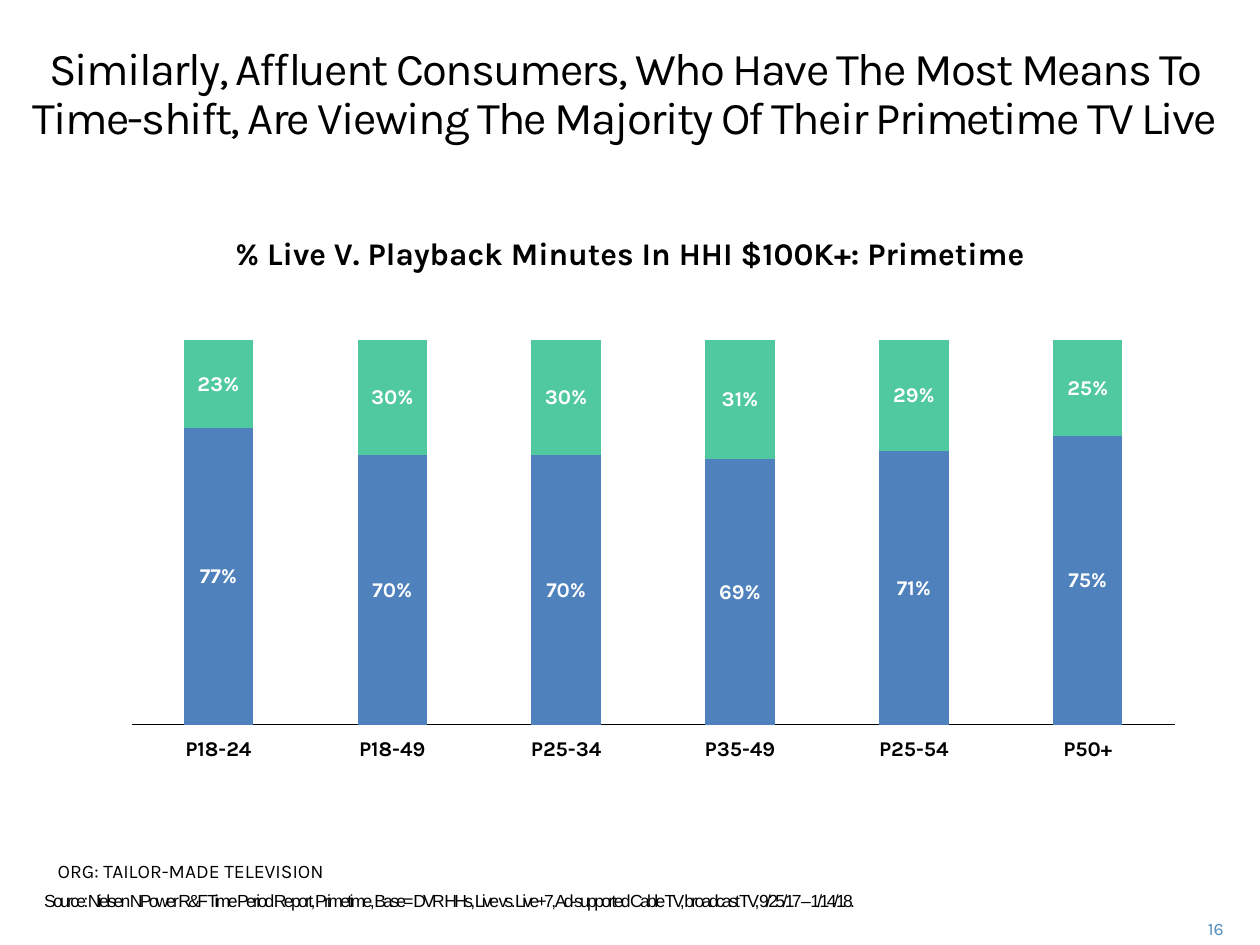
from lxml.etree import SubElement
from pptx import Presentation
from pptx.chart.data import CategoryChartData
from pptx.dml.color import RGBColor
from pptx.enum.chart import XL_CHART_TYPE, XL_TICK_LABEL_POSITION, XL_TICK_MARK
from pptx.enum.text import MSO_ANCHOR, MSO_AUTO_SIZE, PP_ALIGN
from pptx.oxml import parse_xml
from pptx.oxml.ns import nsdecls, qn
from pptx.util import Inches, Pt

BLACK = RGBColor(0x00, 0x00, 0x00)
WHITE = RGBColor(0xFF, 0xFF, 0xFF)
BLUE = RGBColor(0x4F, 0x81, 0xBD)
GREEN = RGBColor(0x50, 0xC8, 0xA0)
NUMBER_BLUE = RGBColor(0x50, 0x8A, 0xBA)
FONT = "Karla"

AGE_GROUPS = ["P18-24", "P18-49", "P25-34", "P35-49", "P25-54", "P50+"]
SERIES = [
    ("Live", [0.77, 0.70, 0.70, 0.69, 0.71, 0.75], BLUE),
    ("Playback", [0.23, 0.30, 0.30, 0.31, 0.29, 0.25], GREEN),
]


def set_font(font, size, color=BLACK, bold=False, name=FONT):
    font.size = Pt(size)
    font.name = name
    font.bold = bold
    font.color.rgb = color


def fill_text(sp, text, size, align=PP_ALIGN.LEFT, wrap=True, **style):
    tf = sp.text_frame
    tf.word_wrap = wrap
    tf.auto_size = MSO_AUTO_SIZE.NONE
    tf.vertical_anchor = MSO_ANCHOR.TOP
    p = tf.paragraphs[0]
    p.text = text
    p.alignment = align
    p.space_before = Pt(0)
    set_font(p.font, size, **style)
    return p


def fill_placeholder(sp, box, text, size, spacing, **style):
    sp.left, sp.top, sp.width, sp.height = box
    tf = sp.text_frame
    tf.margin_left = tf.margin_right = tf.margin_top = tf.margin_bottom = 0
    p = fill_text(sp, text, size, **style)
    p.runs[0].font._element.set("spc", str(spacing))
    return p


def add_title(slide, box):
    p = fill_placeholder(
        slide.shapes.title, box,
        "Similarly, Affluent Consumers, Who Have The Most Means To "
        "Time-shift, Are Viewing The Majority Of Their Primetime TV Live",
        26, -100, align=PP_ALIGN.CENTER)
    p.line_spacing = Pt(28)


def add_source(slide, box):
    p = fill_placeholder(
        slide.placeholders[1], box,
        "Source: Nielsen NPower R&F Time Period Report, Primetime, "
        "Base= DVR HHs, Live vs. Live+7, Ad-supported Cable TV, "
        "broadcast TV, 9/25/17 – 1/14/18.",
        10, -150, name="Arial")
    pPr = p._p.get_or_add_pPr()
    pPr.set("marL", "0")
    pPr.set("indent", "0")
    pPr.insert_element_before(
        parse_xml(f"<a:buNone {nsdecls('a')}/>"), "a:tabLst", "a:defRPr")


def add_label(slide, box, text, size, **style):
    fill_text(slide.shapes.add_textbox(*box), text, size, **style)


def set_plot_area(chart, x, y, w, h):
    plot_area = chart._chartSpace.chart.plotArea
    for old in plot_area.findall(qn("c:layout")):
        plot_area.remove(old)
    layout = parse_xml(f"<c:layout {nsdecls('c')}><c:manualLayout/></c:layout>")
    settings = [("layoutTarget", "inner"), ("xMode", "edge"), ("yMode", "edge"),
                ("x", x), ("y", y), ("w", w), ("h", h)]
    for tag, val in settings:
        SubElement(layout[0], qn(f"c:{tag}")).set("val", str(val))
    plot_area.insert(0, layout)


def add_viewing_chart(slide, box):
    data = CategoryChartData(number_format="0%")
    data.categories = AGE_GROUPS
    for name, values, _ in SERIES:
        data.add_series(name, values)
    chart = slide.shapes.add_chart(
        XL_CHART_TYPE.COLUMN_STACKED, *box, data).chart
    chart.has_title = False
    chart.has_legend = False
    set_font(chart.font, 10)
    set_plot_area(chart, 0.07, 0.06, 0.9, 0.71)

    cat_axis = chart.category_axis
    cat_axis.major_tick_mark = XL_TICK_MARK.NONE
    cat_axis.tick_label_position = XL_TICK_LABEL_POSITION.LOW
    cat_axis.format.line.color.rgb = BLACK
    cat_axis.format.line.width = Pt(0.75)
    set_font(cat_axis.tick_labels.font, 12, bold=True)

    val_axis = chart.value_axis
    val_axis.minimum_scale = 0
    val_axis.maximum_scale = 1
    val_axis.has_major_gridlines = False
    val_axis.visible = False

    plot = chart.plots[0]
    plot.vary_by_categories = False
    plot.gap_width = 150
    plot.overlap = 100
    for series, (_, _, color) in zip(plot.series, SERIES):
        series.format.fill.solid()
        series.format.fill.fore_color.rgb = color
        labels = series.data_labels
        labels.show_value = True
        labels.number_format = "0%"
        labels.number_format_is_linked = False
        set_font(labels.font, 12, WHITE, bold=True)


def inches(*lengths):
    return [Inches(n) for n in lengths]


def main():
    prs = Presentation()
    prs.slide_width, prs.slide_height = inches(10, 7.5)
    slide = prs.slides.add_slide(prs.slide_layouts[1])
    add_title(slide, inches(0.17, 0.36, 9.58, 0.55))
    add_label(slide, inches(1.76, 1.81, 6.48, 0.4),
              "% Live V. Playback Minutes In HHI $100K+: Primetime", 18,
              align=PP_ALIGN.CENTER, wrap=False, bold=True)
    add_viewing_chart(slide, inches(0.4, 2.44, 9.2, 4.3))
    add_label(slide, inches(0.36, 6.77, 3.08, 0.47),
              "ORG: TAILOR-MADE TELEVISION", 11)
    add_source(slide, inches(0.35, 7.06, 7.4, 0.25))
    add_label(slide, inches(9.2, 7.24, 0.61, 0.25), "16", 10,
              align=PP_ALIGN.RIGHT, color=NUMBER_BLUE)
    prs.save("out.pptx")


if __name__ == "__main__":
    main()
